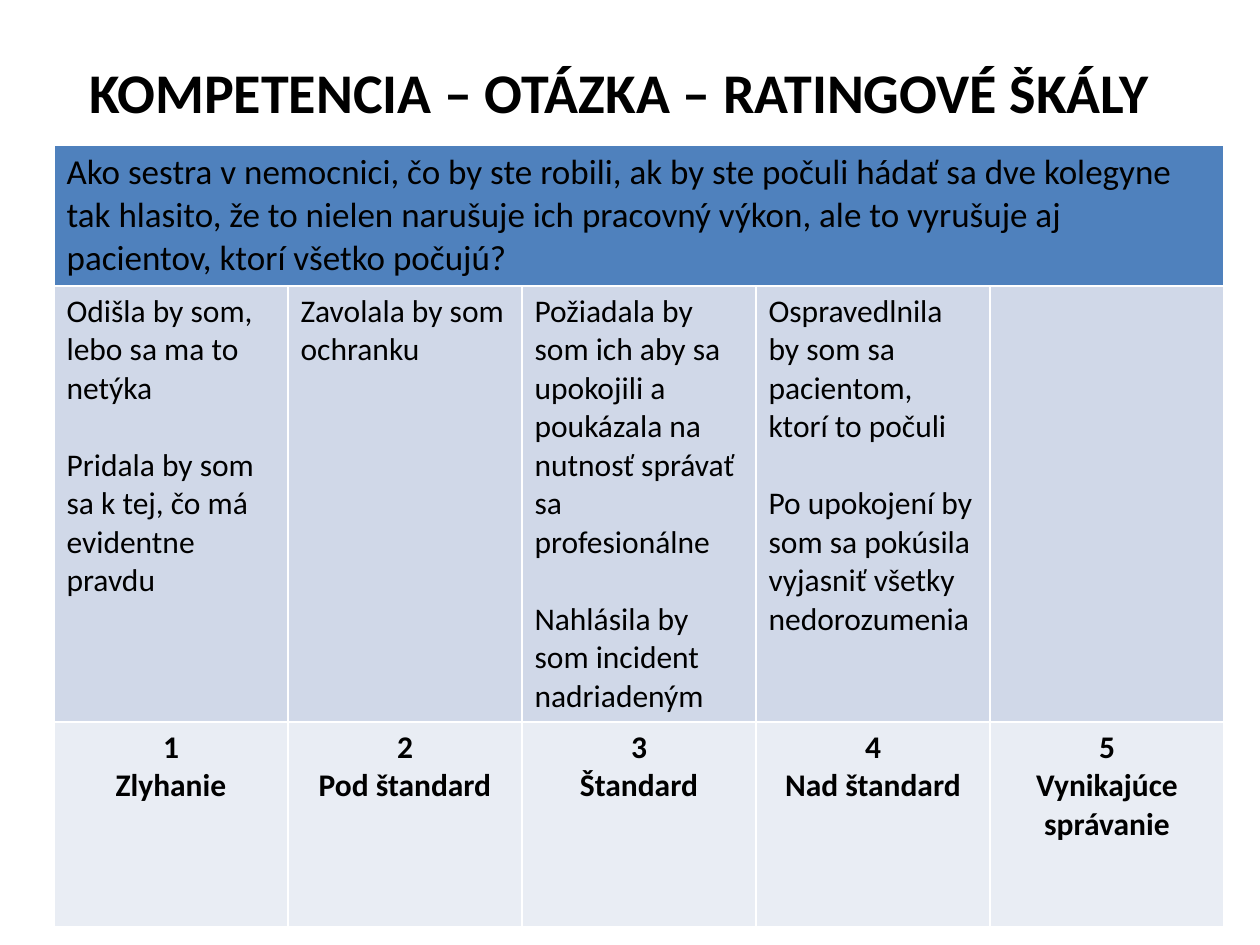
import pptx
import pptx.dml.color
import pptx.enum.text
import pptx.util

COLORS = {"text": "000000", "question": "4F81BD", "answer": "D0D8E8", "rating": "E9EDF4"}
ALIGN = pptx.enum.text.PP_ALIGN
QUESTION = (
    "Ako sestra v nemocnici, čo by ste robili, ak by ste počuli hádať sa dve kolegyne "
    "tak hlasito, že to nielen narušuje ich pracovný výkon, ale to vyrušuje aj "
    "pacientov, ktorí všetko počujú?"
)
ANSWERS = [
    ["Odišla by som, lebo sa ma to netýka",
     "Pridala by som sa k tej, čo má evidentne pravdu"],
    ["Zavolala by som ochranku"],
    ["Požiadala by som ich aby sa upokojili a poukázala na nutnosť správať sa profesionálne",
     "Nahlásila by som incident nadriadeným"],
    ["Ospravedlnila by som sa pacientom, ktorí to počuli",
     "Po upokojení by som sa pokúsila vyjasniť všetky nedorozumenia"],
    [],
]
RATINGS = ["Zlyhanie", "Pod štandard", "Štandard", "Nad štandard", "Vynikajúce správanie"]


class Deck:
    """Holds the style and the current slide, and adds its elements."""

    font = "Calibri"
    scale = 914400 / 126

    def __init__(self, width, height):
        self.prs = pptx.Presentation()
        self.prs.slide_width, self.prs.slide_height = self.px(width), self.px(height)
        self.s = self.prs.slides.add_slide(self.prs.slide_layouts[5])

    def px(self, n):
        return pptx.util.Emu(round(n * self.scale))

    def rgb(self, name):
        return pptx.dml.color.RGBColor.from_string(COLORS[name])

    def text(self, tf, lines, size, bold=False, align=ALIGN.LEFT, gap=0):
        for i, line in enumerate(lines):
            p = tf.add_paragraph() if i else tf.paragraphs[0]
            p.alignment = align
            if i and gap:
                p.space_before = pptx.util.Pt(gap)
            r = p.add_run()
            r.text = line
            r.font.color.rgb = self.rgb("text")
            style = {"name": self.font, "size": pptx.util.Pt(size), "bold": bold}
            for key, value in style.items():
                setattr(r.font, key, value)

    def title(self, text, left, top, width, height):
        sp = self.s.shapes.title
        box = {"left": left, "top": top, "width": width, "height": height}
        for key, value in box.items():
            setattr(sp, key, self.px(value))
        sp.text_frame.vertical_anchor = pptx.enum.text.MSO_ANCHOR.MIDDLE
        self.text(sp.text_frame, [text], 32, bold=True, align=ALIGN.CENTER)

    def table(self, left, top, col_width, cols, heights):
        box = (left, top, col_width * cols, sum(heights))
        frame = self.s.shapes.add_table(len(heights), cols, *map(self.px, box))
        for row, height in zip(frame.table.rows, heights):
            row.height = self.px(height)
        return frame.table

    def cell(self, cell, fill, lines, size=18, **style):
        cell.fill.solid()
        cell.fill.fore_color.rgb = self.rgb(fill)
        self.text(cell.text_frame, lines, size, **style)


def main():
    deck = Deck(1260, 945)
    deck.title("KOMPETENCIA – OTÁZKA – RATINGOVÉ ŠKÁLY", 42, 38, 1155, 107)
    table = deck.table(54, 145, 234, len(RATINGS), [139, 427, 205])
    table.cell(0, 0).merge(table.cell(0, len(RATINGS) - 1))
    deck.cell(table.cell(0, 0), "question", [QUESTION], size=20)
    for col, (answers, rating) in enumerate(zip(ANSWERS, RATINGS)):
        deck.cell(table.cell(1, col), "answer", answers, gap=22)
        deck.cell(table.cell(2, col), "rating", [str(col + 1), rating],
                  bold=True, align=ALIGN.CENTER)
    deck.prs.save("out.pptx")


if __name__ == "__main__":
    main()
